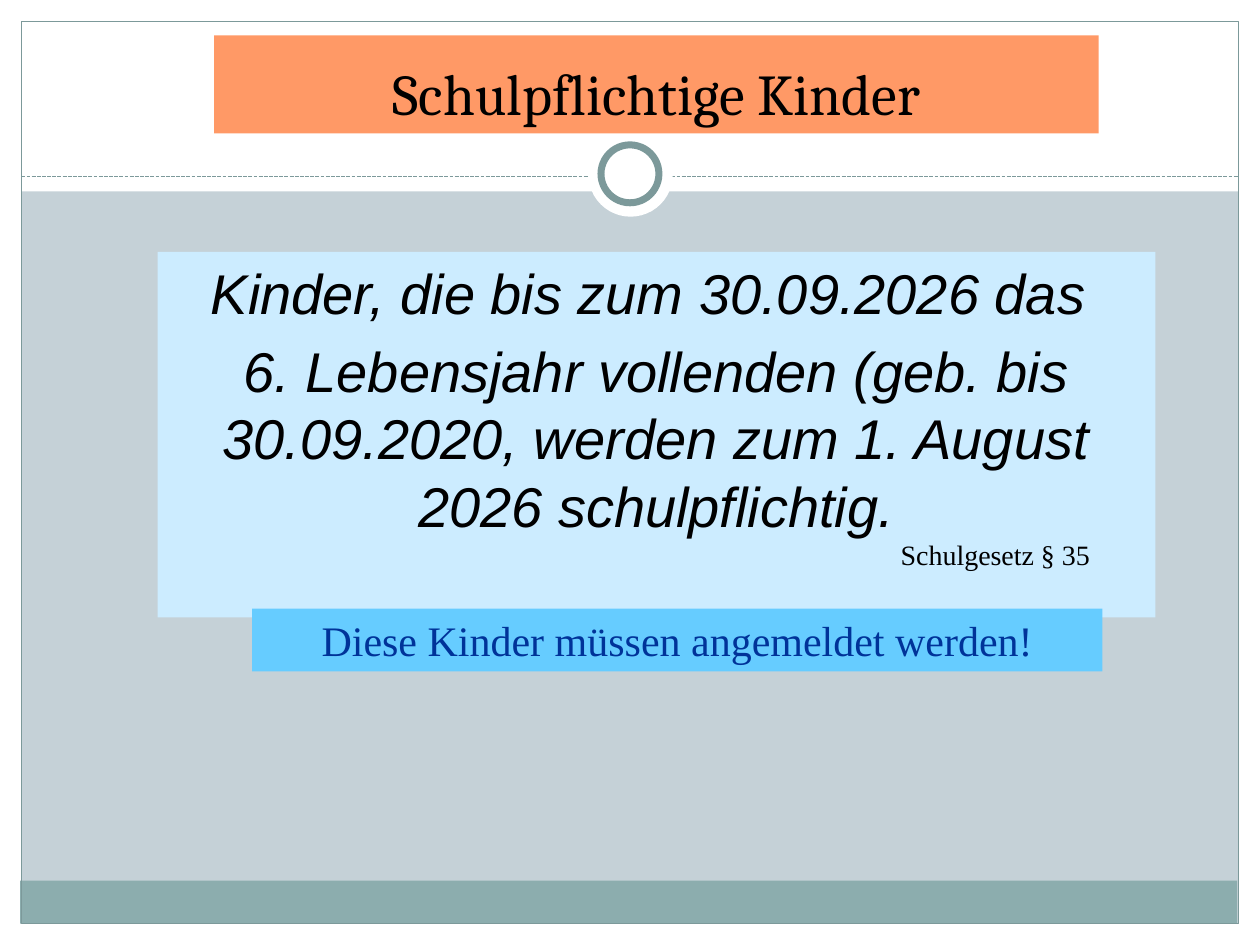
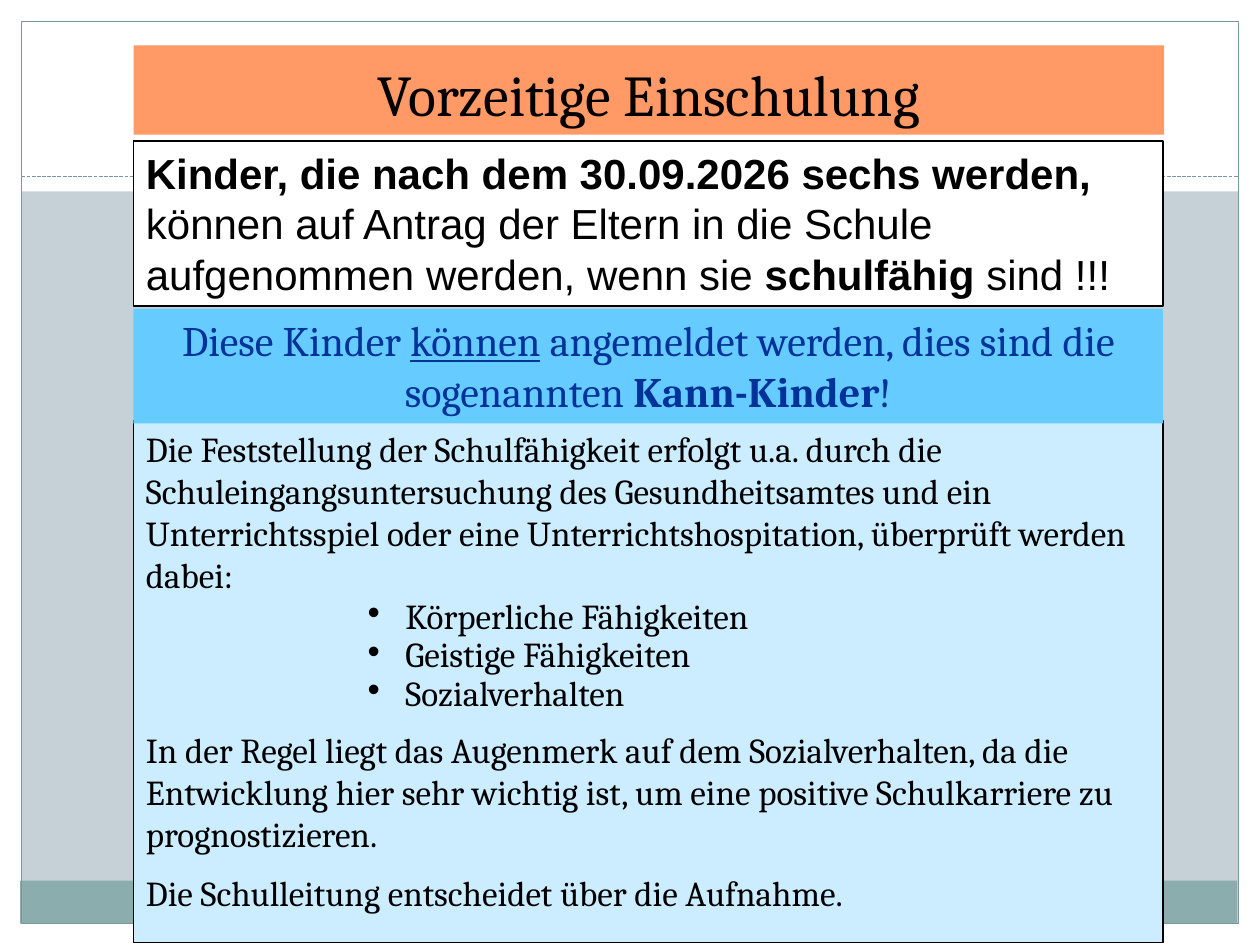
import pptx
import pptx.util
import pptx.dml.color
import pptx.enum.dml
import pptx.enum.shapes
import pptx.enum.text
import pptx.oxml
import pptx.oxml.ns

Inches = pptx.util.Inches
Pt = pptx.util.Pt
Kind = pptx.enum.shapes.MSO_SHAPE
Align = pptx.enum.text.PP_ALIGN
WHITE, BLACK, GREY, TEAL, EDGE = "FFFFFF", "000000", "C5D1D7", "8CADAE", "7C999A"
ORANGE, PALE, SKY, NAVY = "FF9966", "CCECFF", "66CCFF", "003399"


def paint(part, color):
    part.solid()
    part.fore_color.rgb = pptx.dml.color.RGBColor.from_string(color)


def draw(slide, kind, place, fill=None, line=None, width=0.75):
    shape = slide.shapes.add_shape(kind, *map(Inches, place))
    shape.shadow.inherit = False
    if fill:
        paint(shape.fill, fill)
    else:
        shape.fill.background()
    if line:
        paint(shape.line.fill, line)
        shape.line.width = Pt(width)
    else:
        shape.line.fill.background()
    return shape


prs = pptx.Presentation()
prs.slide_width, prs.slide_height = Inches(10), Inches(7.5)
layout = prs.slide_layouts[5]
for holder in list(layout.placeholders)[1:]:
    holder.element.getparent().remove(holder.element)
paint(layout.background.fill, GREY)

heads = [
    ("Schulpflichtige Kinder", (1.7, 0.28, 7.02, 0.78)),
    ("Vorzeitige Einschulung", (1.06, 0.36, 8.18, 0.71)),
]
slides = []
for text, place in heads:
    slide = prs.slides.add_slide(layout)
    slides.append(slide)
    title = slide.shapes.title
    title.left, title.top, title.width, title.height = map(Inches, place)
    paint(title.fill, ORANGE)
    frame = title.text_frame
    frame.text = text
    frame.word_wrap = True
    frame.auto_size = pptx.enum.text.MSO_AUTO_SIZE.NONE
    frame.vertical_anchor = pptx.enum.text.MSO_ANCHOR.BOTTOM
    frame.paragraphs[0].alignment = Align.CENTER
    font = frame.paragraphs[0].runs[0].font
    font.name, font.size = "Cambria", Pt(33)
    paint(font.fill, BLACK)

first, second = slides
bands = [
    ((0, 7.33, 10, 0.17), WHITE, None),
    ((0, 0, 10, 1.52), WHITE, None),
    ((0, 0, 0.17, 7.5), WHITE, None),
    ((9.83, 0, 0.17, 7.5), WHITE, None),
    ((0.16, 6.99, 9.66, 0.34), TEAL, None),
    ((0.17, 0.17, 9.66, 7.16), None, EDGE),
]
decor = [draw(first, Kind.RECTANGLE, *band) for band in bands]
rule = first.shapes.add_connector(
    pptx.enum.shapes.MSO_CONNECTOR.STRAIGHT,
    Inches(0.17), Inches(1.4), Inches(9.83), Inches(1.4))
paint(rule.line.fill, EDGE)
rule.line.width = Pt(0.75)
rule.line.dash_style = pptx.enum.dml.MSO_LINE.SQUARE_DOT
rule._element.spPr.append(pptx.oxml.parse_xml(
    f'<a:effectLst {pptx.oxml.ns.nsdecls("a")}/>'))
decor += [rule, draw(first, Kind.OVAL, (4.67, 1.05, 0.67, 0.67), WHITE)]
tree = layout.shapes.element
for spot, shape in enumerate(decor):
    tree.insert(2 + spot, shape.element)
draw(first, Kind.OVAL, (4.77, 1.15, 0.46, 0.46), WHITE, EDGE, 4)

panels = [
    (first, (1.25, 2, 7.92, 2.9), PALE, None, "Arial", 32, BLACK, Align.CENTER, 6.4, [
        [("Kinder, die bis zum 30.09.2026 das ", "i")],
        [("6. Lebensjahr vollenden (geb. bis 30.09.2020, werden zum "
          "1. August 2026 schulpflichtig.", "i")]]),
    (first, (7.05, 4.22, 2.05, 0.37), None, None, "Times New Roman", 16, BLACK,
     Align.LEFT, 8, [[("Schulgesetz § 35", "")]]),
    (first, (2, 4.83, 6.75, 0.5), SKY, None, "Times New Roman", 24, NAVY,
     Align.CENTER, 12, [[("Diese Kinder müssen angemeldet werden!", "")]]),
    (second, (1.06, 1.12, 8.17, 1.31), WHITE, BLACK, "Arial", 24, BLACK, Align.LEFT, 4.8, [
        [("Kinder, die nach dem 30.09.2026 sechs werden, ", "b"),
         ("können auf Antrag der Eltern in die Schule aufgenommen werden, wenn sie ", ""),
         ("schulfähig", "b"), (" sind !!!", "")]]),
    (second, (1.06, 3.34, 8.17, 4.14), PALE, BLACK, "Cambria", 20, BLACK, Align.LEFT, 10, [
        [("Die Feststellung der Schulfähigkeit erfolgt u.a. durch die "
          "Schuleingangsuntersuchung des Gesundheitsamtes und ein Unterrichtsspiel "
          "oder eine Unterrichtshospitation, überprüft werden dabei:", "")],
        [("Körperliche Fähigkeiten", "•")],
        [("Geistige Fähigkeiten", "•")],
        [("Sozialverhalten", "•")],
        [("In der Regel liegt das Augenmerk auf dem Sozialverhalten, da die "
          "Entwicklung hier sehr wichtig ist, um eine positive Schulkarriere "
          "zu prognostizieren.", "")],
        [("Die Schulleitung entscheidet über die Aufnahme.", "")]]),
    (second, (1.06, 2.45, 8.17, 0.91), SKY, None, "Cambria", 24, NAVY, Align.CENTER, 12, [
        [("Diese Kinder ", ""), ("können", "u"),
         (" angemeldet werden, dies sind die sogenannten ", ""),
         ("Kann-Kinder", "b"), ("!", "")]]),
]
for slide, place, fill, line, face, size, color, align, gap, paras in panels:
    if fill:
        shape = draw(slide, Kind.RECTANGLE, place, fill, line)
    else:
        shape = slide.shapes.add_textbox(*map(Inches, place))
    frame = shape.text_frame
    frame.word_wrap = True
    frame.vertical_anchor = pptx.enum.text.MSO_ANCHOR.TOP
    for spot, parts in enumerate(paras):
        para = frame.add_paragraph() if spot else frame.paragraphs[0]
        para.alignment = align
        para.space_before = Pt(gap)
        for text, style in parts:
            run = para.add_run()
            run.text = text
            font = run.font
            font.name, font.size = face, Pt(size)
            font.bold, font.italic, font.underline = (style == mark for mark in "biu")
            paint(font.fill, color)
        if parts[0][1] == "•":
            para.level = 4
            para.line_spacing = 0.5
            props = para._p.get_or_add_pPr()
            props.set("marL", str(Inches(2.06)))
            props.set("indent", str(Inches(-0.3)))
            for tag in ('buFont typeface="Arial"', 'buChar char="•"'):
                props.append(pptx.oxml.parse_xml(
                    f'<a:{tag} {pptx.oxml.ns.nsdecls("a")}/>'))

prs.save("out.pptx")
